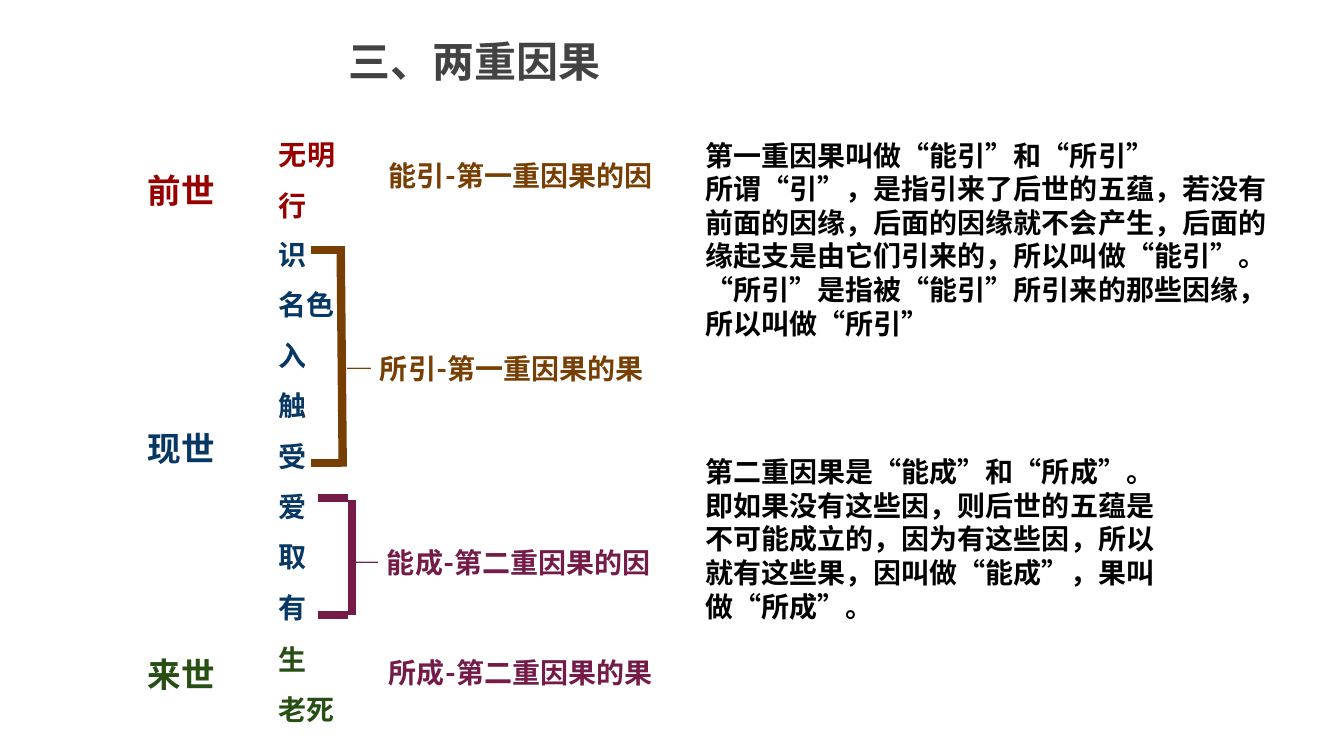
from pptx import Presentation
from pptx.dml.color import RGBColor
from pptx.enum.shapes import MSO_CONNECTOR
from pptx.enum.text import MSO_ANCHOR, MSO_AUTO_SIZE, PP_ALIGN
from pptx.oxml.ns import qn
from pptx.util import Pt
from lxml import etree

LINE = MSO_CONNECTOR.STRAIGHT
TOP, LEFT = MSO_ANCHOR.TOP, PP_ALIGN.LEFT
GROW, FIXED = MSO_AUTO_SIZE.SHAPE_TO_FIT_TEXT, MSO_AUTO_SIZE.NONE

GRAY = RGBColor(0x43, 0x43, 0x43)
BLACK = RGBColor(0, 0, 0)
RED = RGBColor(0x98, 0, 0)
BLUE = RGBColor(0x07, 0x37, 0x63)
GREEN = RGBColor(0x27, 0x4E, 0x13)
BROWN = RGBColor(0x78, 0x3F, 0x04)
PLUM = RGBColor(0x74, 0x1B, 0x47)
SANS, SLAB = "Arial", "Roboto Slab"


def add_run(para, text, font, size, color):
    run = para.add_run()
    run.text = text
    run.font.name = font
    run.font.size = Pt(size)
    run.font.bold = True
    run.font.color.rgb = color


def add_text(slide, box, lines, color, font=SLAB, size=20, pitch=None, gap=0):
    shape = slide.shapes.add_textbox(*map(Pt, box))
    frame = shape.text_frame
    frame.word_wrap = True
    frame.auto_size = GROW
    frame.margin_left = frame.margin_right = Pt(7.2)
    frame.margin_top = frame.margin_bottom = Pt(7.2)
    for i, line in enumerate(lines):
        para = frame.add_paragraph() if i else frame.paragraphs[0]
        if pitch:
            para.line_spacing = pitch
        if i:
            para.space_before = Pt(gap)
        add_run(para, line, font, size, color)


def add_line(slide, ends, color):
    line = slide.shapes.add_connector(LINE, *map(Pt, ends))
    line.line.color.rgb = color
    line.line.width = Pt(6)
    etree.SubElement(line._element.spPr, qn("a:effectLst"))


def add_title(slide, box, text):
    title = slide.shapes.title
    title.left, title.top, title.width, title.height = map(Pt, box)
    frame = title.text_frame
    frame.auto_size = FIXED
    frame.vertical_anchor = TOP
    frame.margin_left = frame.margin_right = Pt(7.2)
    frame.margin_top = 0
    para = frame.paragraphs[0]
    para.alignment = LEFT
    para.line_spacing = 0.9
    add_run(para, text, SANS, 30, GRAY)


def add_era(slide, box, drop, name, links, color):
    """An era name, with its links of the chain listed to the right."""
    x, y, w, h = box
    add_text(slide, (x, y + drop, 82, 44), [name], color, SANS, 24, 1.15)
    # Each link is 36 points below the one before
    add_text(slide, (x + 93.6, y, w - 93.6, h), links, color,
             pitch=Pt(15), gap=21)


def add_bracket(slide, box, arms, spine, color):
    """Two arms from the left edge, and a spine given relative to the box."""
    x, y, h = box
    for top, arm in zip((y, y + h), arms):
        add_line(slide, (x, top, x + arm, top), color)
    x1, y1, x2, y2 = spine
    add_line(slide, (x + x1, y + y1, x + x2, y + y2), color)


def main():
    prs = Presentation()
    prs.slide_width, prs.slide_height = Pt(960), Pt(540)
    slide = prs.slides.add_slide(prs.slide_layouts[5])
    add_title(slide, (242, 29.5, 511, 112), "三、两重因果")

    # Three eras and their twelve links
    eras = [
        (100.2, 190.8, 63.4, 10, "前世", ["无明", "行"], RED),
        (171.4, 236, 281.5, 122.4, "现世",
         ["识", "名色", "入", "触", "受", "爱", "取", "有"], BLUE),
        (460.8, 236, 63.4, -5, "来世", ["生", "老死"], GREEN),
    ]
    for y, w, h, drop, name, links, color in eras:
        add_era(slide, (98.6, y, 93.6 + w, h), drop, name, links, color)

    # Brackets around the links of the present
    add_bracket(slide, (222.5, 178.6, 152), (23.7, 20.9),
                (20.9, 2, 22.3, 154.8), BROWN)
    add_bracket(slide, (227.5, 355.7, 83.5), (20.9, 20.9),
                (23.8, 1.4, 23.8, 83.5), PLUM)

    # Causes and effects
    labels = [
        (270.7, 105.8, 216, "能引-第一重因果的因", BROWN),
        (239.8, 244, 273.6, "— 所引-第一重因果的果", BROWN),
        (244.8, 382.3, 328.3, "— 能成-第二重因果的因", PLUM),
        (270.7, 460.8, 236, "所成-第二重因果的果", PLUM),
    ]
    for x, y, w, text, color in labels:
        add_text(slide, (x, y, w, 38.9), [text], color)

    # Explanations
    add_text(slide, (496.8, 91.4, 419.8, 184.3), [
        "第一重因果叫做“能引”和“所引”",
        "所谓“引”，是指引来了后世的五蕴，若没有前面的因缘，后面的因缘就不会产生，"
        "后面的缘起支是由它们引来的，所以叫做“能引”。",
        "“所引”是指被“能引”所引来的那些因缘，所以叫做“所引”",
    ], BLACK)
    add_text(slide, (496.8, 317.5, 350, 159.8), [
        "第二重因果是“能成”和“所成”。",
        "即如果没有这些因，则后世的五蕴是不可能成立的，因为有这些因，"
        "所以就有这些果，因叫做“能成”，果叫做“所成”。",
    ], BLACK, SANS)

    prs.save("out.pptx")


if __name__ == "__main__":
    main()
